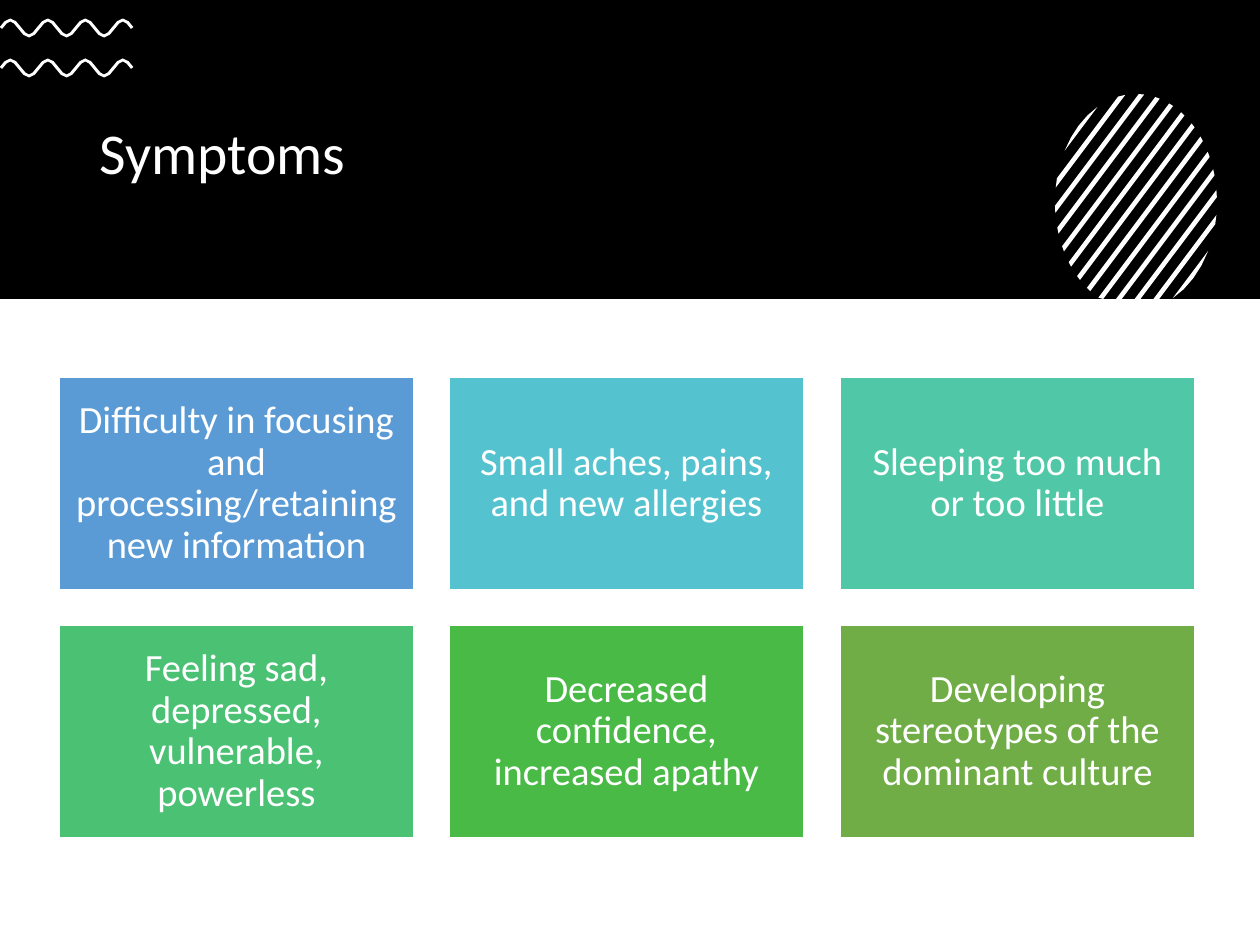
import math
from dataclasses import dataclass

from pptx import Presentation
from pptx import util as u
from pptx.dml.color import RGBColor
from pptx.enum import shapes, text

SCALE = u.Inches(1) / 126
BAND_HEIGHT = 299
SYMPTOMS = [
    ("Difficulty in focusing and processing/retaining new information", "5B9BD5"),
    ("Small aches, pains, and new allergies", "55C3CF"),
    ("Sleeping too much or too little", "50C8A7"),
    ("Feeling sad, depressed, vulnerable, powerless", "4BC174"),
    ("Decreased confidence, increased apathy", "4ABA46"),
    ("Developing stereotypes of the dominant culture", "70AD47"),
]


@dataclass(frozen=True)
class Theme:
    """Colours and type of the slide."""
    font: str = "Calibri"
    title_size: int = 33
    card_size: int = 22
    dark: str = "000000"
    light: str = "FFFFFF"


THEME = Theme()


def px(length):
    """Turn pixels into EMU."""
    return u.Emu(round(length * SCALE))


def paint(shape, color):
    """Give a shape a flat fill with no line or shadow."""
    shape.shadow.inherit = False
    shape.fill.solid()
    shape.fill.fore_color.rgb = RGBColor.from_string(color)
    shape.line.fill.background()


def write(shape, words, size, align):
    """Put one vertically centred light paragraph in a shape."""
    frame = shape.text_frame
    frame.word_wrap = True
    frame.auto_size = text.MSO_AUTO_SIZE.NONE
    frame.vertical_anchor = text.MSO_ANCHOR.MIDDLE
    frame.text = words
    para = frame.paragraphs[0]
    para.alignment = align
    para.line_spacing = 0.9
    para.font.name = THEME.font
    para.font.size = u.Pt(size)
    para.font.color.rgb = RGBColor.from_string(THEME.light)


def add_box(page, left, top, width, height, color):
    """Add a flat rectangle."""
    box = page.shapes.add_shape(
        shapes.MSO_SHAPE.RECTANGLE, px(left), px(top), px(width), px(height))
    paint(box, color)
    return box


def add_outline(group, points):
    """Add a closed light polygon to a group."""
    corners = [(px(x), px(y)) for x, y in points]
    builder = group.shapes.build_freeform(*corners[0], scale=1.0)
    builder.add_line_segments(corners[1:], close=True)
    paint(builder.convert_to_shape(), THEME.light)


def add_title(page, words):
    """Place the title in front of the dark band."""
    title = page.shapes.title
    title.left, title.top, title.width, title.height = map(px, (87, 78, 1086, 155))
    write(title, words, THEME.title_size, text.PP_ALIGN.LEFT)
    tree = title._element.getparent()
    tree.append(title._element)


def add_wave(group, middle):
    """Draw a wavy ribbon of three and a half periods."""
    start, period, swing, half = 1, 37.5, 8, 1.5
    upper, lower = [], []
    for step in range(29):
        angle = math.pi * step / 4
        x = start + period * step / 8
        y = middle - swing * math.sin(angle)
        slope = -swing * math.cos(angle) * math.tau / period
        reach = half / math.hypot(1, slope)
        upper.append((x + slope * reach, y - reach))
        lower.append((x - slope * reach, y + reach))
    add_outline(group, upper + lower[::-1])


def rim_point(angle):
    """Find a point on the oval, slid along its stripe to stay in the band."""
    x = 1136 + 81 * math.cos(angle)
    y = 202 + 108 * math.sin(angle)
    excess = max(0, y - BAND_HEIGHT)
    return x + excess * 3 / 4, y - excess


def add_striped_oval(group):
    """Fill an oval with thirteen evenly spaced diagonal stripes."""
    first, pitch, width, reach, last = -459, 74.3, 23, 455, 12
    for index in range(last + 1):
        near = first + pitch * index
        begin, end = (math.acos(max(-1, min(1, edge / reach)))
                      for edge in (near, near + width))
        steps = 2 if index in (0, last) else 1
        turns = [begin + (end - begin) * step / steps for step in range(steps + 1)]
        right = [rim_point(math.pi / 4 - turn) for turn in turns]
        left = [rim_point(math.pi / 4 + turn) for turn in turns]
        add_outline(group, right + left[::-1])


def add_card(page, index, words, color):
    """Add a symptom card at its place in the three-column grid."""
    row, column = divmod(index, 3)
    left = 59 + 781 * column // 2
    card = add_box(page, left, 377 + 248 * row, 355, 213, color)
    card.line.color.rgb = RGBColor.from_string(THEME.light)
    card.line.width = u.Pt(1)
    write(card, words, THEME.card_size, text.PP_ALIGN.CENTER)
    frame = card.text_frame
    frame.margin_left = frame.margin_right = px(12)
    frame.margin_top = frame.margin_bottom = px(11)


def main():
    """Build and save the slide."""
    deck = Presentation()
    deck.slide_width, deck.slide_height = px(1260), px(945)
    page = deck.slides.add_slide(deck.slide_layouts[5])
    add_box(page, 0, 0, 1260, BAND_HEIGHT, THEME.dark)
    add_title(page, "Symptoms")
    waves = page.shapes.add_group_shape()
    for middle in (68, 28):
        add_wave(waves, middle)
    add_striped_oval(page.shapes.add_group_shape())
    for index, (words, color) in enumerate(SYMPTOMS):
        add_card(page, index, words, color)
    deck.save("out.pptx")


if __name__ == "__main__":
    main()
